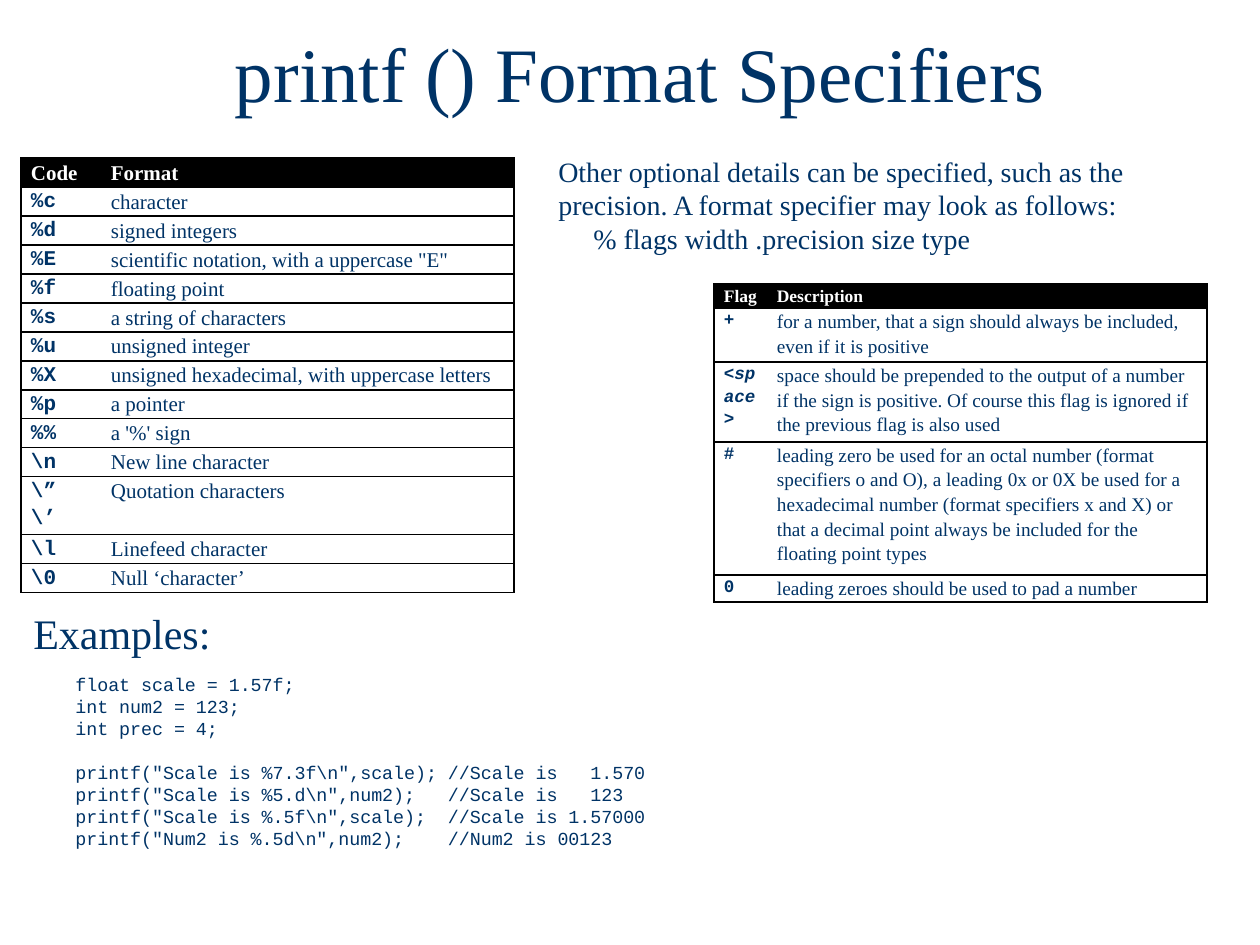
"""Build the printf format specifiers slide."""
from lxml import etree
from pptx import Presentation
from pptx.dml.color import RGBColor
from pptx.enum.text import MSO_ANCHOR, MSO_AUTO_SIZE, PP_ALIGN
from pptx.oxml.ns import qn
from pptx.util import Emu, Pt

NAVY = RGBColor(0x00, 0x33, 0x66)
BLACK = RGBColor(0x00, 0x00, 0x00)
WHITE = RGBColor(0xFF, 0xFF, 0xFF)
SERIF, MONO = "Times New Roman", "Courier New"
MIDDLE, CENTER, NO_FIT = MSO_ANCHOR.MIDDLE, PP_ALIGN.CENTER, MSO_AUTO_SIZE.NONE
TITLE_ONLY = 5

CODES = [
    ("Code", "Format"),
    ("%c", "character"),
    ("%d", "signed integers"),
    ("%E", 'scientific notation, with a uppercase "E"'),
    ("%f", "floating point"),
    ("%s", "a string of characters"),
    ("%u", "unsigned integer"),
    ("%X", "unsigned hexadecimal, with uppercase letters"),
    ("%p", "a pointer"),
    ("%%", "a '%' sign"),
    ("\\n", "New line character"),
    ("\\” \\’", "Quotation characters"),
    ("\\l", "Linefeed character"),
    ("\\0", "Null ‘character’"),
]
FLAGS = [
    ("Flag", "Description"),
    ("+", "for a number, that a sign should always be included, even if it is positive"),
    ("<space>", "space should be prepended to the output of a number if the sign is "
     "positive. Of course this flag is ignored if the previous flag is also used"),
    ("#", "leading zero be used for an octal number (format specifiers o and O), a "
     "leading 0x or 0X be used for a hexadecimal number (format specifiers x and X) or "
     "that a decimal point always be included for the floating point types"),
    ("0", "leading zeroes should be used to pad a number"),
]
DECLARATIONS = ["float scale = 1.57f;", "int num2 = 123;", "int prec = 4;"]
CALLS = [
    'printf("Scale is %7.3f\\n",scale); //Scale is   1.570',
    'printf("Scale is %5.d\\n",num2);   //Scale is   123',
    'printf("Scale is %.5f\\n",scale);  //Scale is 1.57000',
    'printf("Num2 is %.5d\\n",num2);    //Num2 is 00123',
]


def px(length):
    return Emu(round(length * 914400 / 126))


def write(para, text, size, font=SERIF, color=NAVY, bold=False, italic=False):
    span = para.add_run()
    span.text = text
    span.font.size = Pt(size)
    span.font.name = font
    span.font.color.rgb = color
    span.font.bold = bold
    span.font.italic = italic


class SlideWriter:
    """Hold the style and the current slide."""

    def __init__(self, page):
        self.page = page

    def place(self, shape, bounds):
        shape.left, shape.top, shape.width, shape.height = map(px, bounds)

    def title(self, text, bounds):
        box = self.page.shapes.title
        self.place(box, bounds)
        frame = box.text_frame
        frame.auto_size = NO_FIT
        frame.vertical_anchor = MIDDLE
        para = frame.paragraphs[0]
        para.alignment = CENTER
        para.line_spacing = 0.85
        write(para, text, 44)

    def text(self, lines, bounds, size, font=SERIF, wrap=True):
        frame = self.page.shapes.add_textbox(*map(px, bounds)).text_frame
        frame.word_wrap = wrap
        for index, line in enumerate(lines):
            para = frame.add_paragraph() if index else frame.paragraphs[0]
            write(para, line, size, font)
        return frame.paragraphs

    def border(self, cell, sides):
        properties = cell._tc.get_or_add_tcPr()
        for index, side in enumerate("LRTB"):
            line = etree.Element(qn(f"a:ln{side}"), w=str(Pt(1)))
            if side in sides:
                fill = etree.SubElement(line, qn("a:solidFill"))
                etree.SubElement(fill, qn("a:srgbClr"), val=str(BLACK))
            else:
                etree.SubElement(line, qn("a:noFill"))
            properties.insert(index, line)

    def cell(self, cell, text, **style):
        cell.margin_left = cell.margin_right = px(10)
        cell.margin_top = cell.margin_bottom = 0
        para = cell.text_frame.paragraphs[0]
        para.line_spacing = 1.15
        para.space_before = Pt(6)
        write(para, text, **style)

    def table(self, rows, left, top, widths, heights, key_size, text_size, italic_keys=()):
        bounds = left, top, sum(widths), sum(heights)
        table = self.page.shapes.add_table(len(rows), 2, *map(px, bounds)).table
        table.first_row = table.horz_banding = False
        for column, width in zip(table.columns, widths):
            column.width = px(width)
        for index, (texts, height) in enumerate(zip(rows, heights)):
            table.rows[index].height = px(height)
            key, description = table.rows[index].cells
            if index == 0:
                styles = [dict(size=key_size, color=WHITE, bold=True)] * 2
            else:
                styles = [dict(size=key_size, font=MONO, bold=True,
                               italic=texts[0] in italic_keys),
                          dict(size=text_size)]
            for cell, text, style, sides in zip(
                    (key, description), texts, styles, ("LTB", "RTB")):
                self.cell(cell, text, **style)
                if index == 0:
                    cell.fill.solid()
                    cell.fill.fore_color.rgb = BLACK
                else:
                    cell.fill.background()
                self.border(cell, sides)


def main():
    deck = Presentation()
    deck.slide_width, deck.slide_height = px(1260), px(945)
    writer = SlideWriter(deck.slides.add_slide(deck.slide_layouts[TITLE_ONLY]))

    writer.title("printf () Format Specifiers", (132, 31, 1017, 95))
    code_heights = [58 if " " in code else 29 for code, _ in CODES]
    writer.table(CODES, 21, 158, (80, 413), code_heights, 12, 12)

    details = writer.text(
        ["Other optional details can be specified, such as the precision. "
         "A format specifier may look as follows:",
         "% flags width .precision size type"],
        (546, 148, 640, 115), 16)
    details[1]._p.get_or_add_pPr().set("marL", str(px(35)))

    writer.table(FLAGS, 714, 284, (53, 440), (23, 54, 79, 133, 27), 10, 11,
                 italic_keys=("<space>",))

    code = writer.text(DECLARATIONS + CALLS, (63, 667, 600, 236), 10.5, MONO, wrap=False)
    code[len(DECLARATIONS)].space_before = Pt(12.5)
    writer.text(["Examples:"], (21, 601, 204, 63), 24, wrap=False)

    deck.save("out.pptx")


if __name__ == "__main__":
    main()
